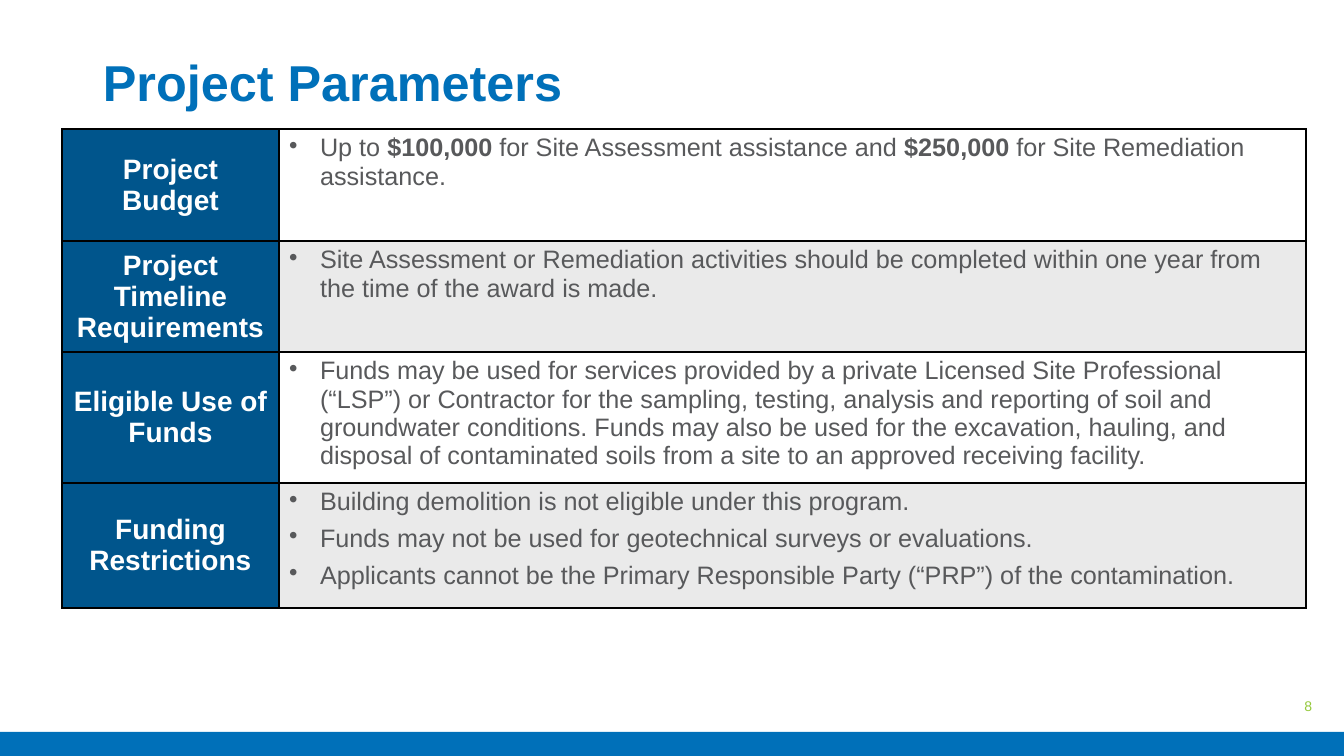
from pptx import Presentation
from pptx.dml.color import RGBColor
from pptx.enum.shapes import MSO_SHAPE
from pptx.enum.text import MSO_ANCHOR as Anchor, PP_ALIGN as Align
from pptx.oxml import parse_xml
from pptx.oxml.ns import nsdecls
from pptx.util import Pt

PX = 914400 / 100.8
THEME = {
    "font": "Arial",
    "blue": "0070B9", "navy": "00558C", "green": "95C93C", "gray": "58595B",
    "white": "FFFFFF", "band": "EAEAEA", "border": "000000",
    "title": 36, "label": 20, "body": 18, "number": 10,
}
SECTIONS = [
    ("Project Budget", 112,
     ["Up to *$100,000* for Site Assessment assistance and *$250,000* "
      "for Site Remediation assistance."]),
    ("Project Timeline Requirements", 107,
     ["Site Assessment or Remediation activities should be completed within "
      "one year from the time of the award is made."]),
    ("Eligible Use of Funds", 123,
     ["Funds may be used for services provided by a private Licensed Site "
      "Professional (“LSP”) or Contractor for the sampling, testing, analysis "
      "and reporting of soil and groundwater conditions. Funds may also be used "
      "for the excavation, hauling, and disposal of contaminated soils from a "
      "site to an approved receiving facility."]),
    ("Funding Restrictions", 125,
     ["Building demolition is not eligible under this program.",
      "Funds may not be used for geotechnical surveys or evaluations.",
      "Applicants cannot be the Primary Responsible Party (“PRP”) of the "
      "contamination."]),
]


def px(*lengths):
    return [round(length * PX) for length in lengths]


def write(paragraph, text, size, color, bold=False, **layout):
    """Fill a paragraph; words between asterisks switch the bold setting."""
    for name, value in layout.items():
        setattr(paragraph, name, value)
    for index, part in enumerate(text.split("*")):
        run = paragraph.add_run()
        run.text = part
        formats = {"name": THEME["font"], "size": Pt(THEME[size]),
                   "bold": bold != (index % 2 == 1)}
        for name, value in formats.items():
            setattr(run.font, name, value)
        run.font.color.rgb = RGBColor.from_string(THEME[color])


deck = Presentation()
deck.slide_width, deck.slide_height = px(1344, 756)
slide = deck.slides.add_slide(deck.slide_layouts[6])

footer = slide.shapes.add_shape(MSO_SHAPE.RECTANGLE, *px(0, 732, 1344, 24))
footer.shadow.inherit = False
footer.fill.solid()
footer.fill.fore_color.rgb = RGBColor.from_string(THEME["blue"])
footer.line.fill.background()

for text, box, size, color, bold, layout in [
    ("Project Parameters", (93, 29, 1159, 112), "title", "blue", True,
     {"line_spacing": 0.9}),
    ("8", (1020, 686, 302, 40), "number", "green", False,
     {"alignment": Align.RIGHT}),
]:
    frame = slide.shapes.add_textbox(*px(*box)).text_frame
    frame.word_wrap = True
    frame.vertical_anchor = Anchor.MIDDLE
    write(frame.paragraphs[0], text, size, color, bold, **layout)

table_height = sum(height for _, height, _ in SECTIONS)
table = slide.shapes.add_table(
    len(SECTIONS), 2, *px(62, 129, 1244, table_height)).table
table.first_row = table.horz_banding = False
for column, width in zip(table.columns, px(217, 1027)):
    column.width = width

bullet_indent, = px(31)
for row, (label, height, details) in enumerate(SECTIONS):
    table.rows[row].height, = px(height)
    label_cell, detail_cell = table.cell(row, 0), table.cell(row, 1)

    label_cell.vertical_anchor = Anchor.MIDDLE
    write(label_cell.text_frame.paragraphs[0], label, "label", "white", True,
          alignment=Align.CENTER)

    detail_frame = detail_cell.text_frame
    for index, detail in enumerate(details):
        item = detail_frame.add_paragraph() if index else detail_frame.paragraphs[0]
        properties = item._p.get_or_add_pPr()
        properties.set("marL", str(bullet_indent))
        properties.set("indent", str(-bullet_indent))
        properties.append(parse_xml(f'<a:buChar {nsdecls("a")} char="•"/>'))
        write(item, detail, "body", "gray", space_before=Pt(6 if index else 0))

    detail_fill = "band" if row % 2 else "white"
    for cell, fill in ((label_cell, "navy"), (detail_cell, detail_fill)):
        cell.fill.solid()
        cell.fill.fore_color.rgb = RGBColor.from_string(THEME[fill])
        for position, side in enumerate("LRTB"):
            cell._tc.get_or_add_tcPr().insert(position, parse_xml(
                f'<a:ln{side} {nsdecls("a")} w="{Pt(1)}"><a:solidFill>'
                f'<a:srgbClr val="{THEME["border"]}"/></a:solidFill></a:ln{side}>'))

deck.save("out.pptx")
